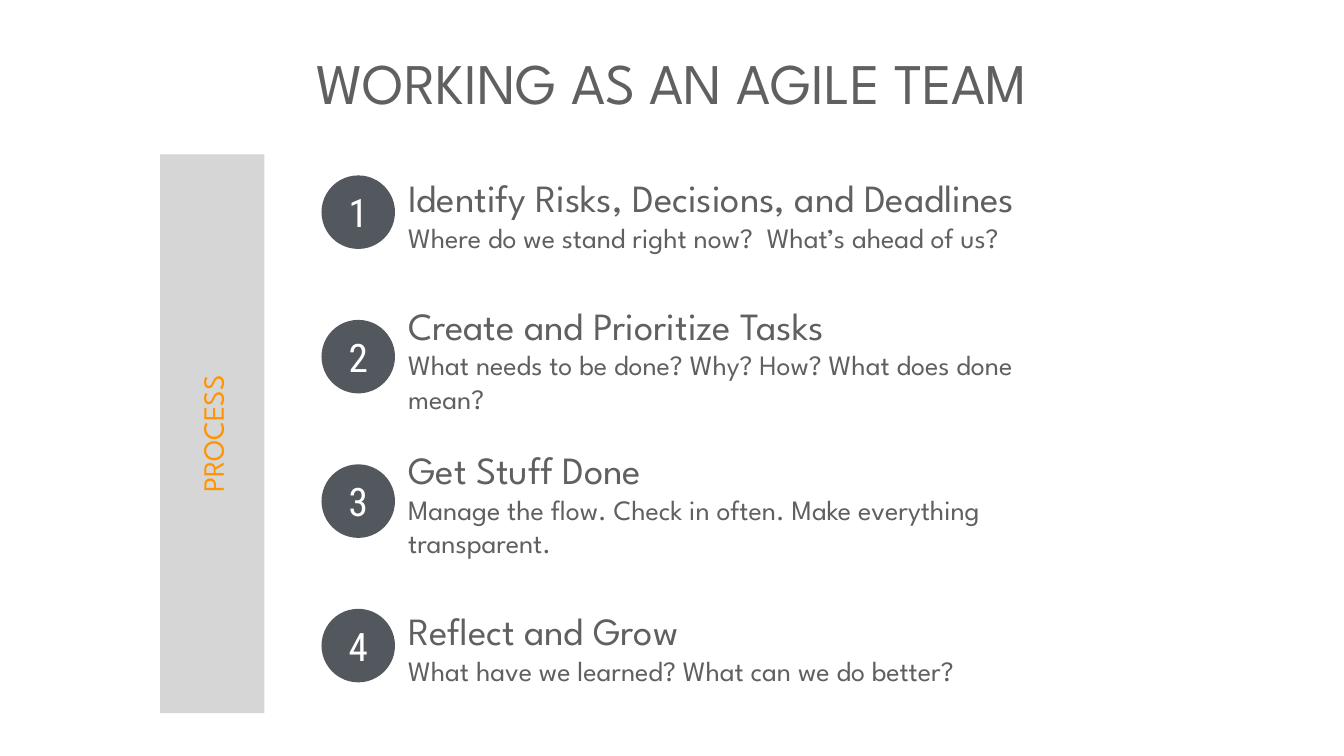
from pptx import Presentation
from pptx.dml.color import RGBColor
from pptx.enum.shapes import MSO_SHAPE
from pptx.enum.text import MSO_ANCHOR, PP_ALIGN
from pptx.util import Inches, Pt

RECTANGLE, OVAL = MSO_SHAPE.RECTANGLE, MSO_SHAPE.OVAL
MIDDLE = MSO_ANCHOR.MIDDLE
LEFT, CENTER = PP_ALIGN.LEFT, PP_ALIGN.CENTER

WIDTH, HEIGHT = 26.67, 15
INSET = Inches(0.08)

WHITE = RGBColor(0xFF, 0xFF, 0xFF)
LIGHT_GRAY = RGBColor(0xD6, 0xD6, 0xD6)
SLATE = RGBColor(0x53, 0x58, 0x5F)
TEXT_GRAY = RGBColor(0x60, 0x60, 0x60)
ORANGE = RGBColor(0xFF, 0x93, 0x00)

HEADING_FONT = "League Spartan"
NUMBER_FONT = "Roboto Condensed"

# Percent of the slide's height between two steps
STEP_PITCH = 19.11

# Heading, detail, text width in percent of the slide's width
STEPS = [
    ("Identify Risks, Decisions, and Deadlines",
     "Where do we stand right now?  What’s ahead of us?", 58),
    ("Create and Prioritize Tasks",
     "What needs to be done? Why? How? What does done mean?", 51.63),
    ("Get Stuff Done",
     "Manage the flow. Check in often. Make everything transparent.", 52.27),
    ("Reflect and Grow",
     "What have we learned? What can we do better?", 58),
]


def area(left, top, width, height):
    """Turn percentages of the slide's size into lengths."""
    return (Inches(WIDTH * left / 100), Inches(HEIGHT * top / 100),
            Inches(WIDTH * width / 100), Inches(HEIGHT * height / 100))


def write(shape, lines, font_name, color, align):
    """Fill a shape with paragraphs given as (text, size) pairs."""
    frame = shape.text_frame
    frame.word_wrap = True
    frame.vertical_anchor = MIDDLE
    frame.margin_left = frame.margin_right = INSET
    frame.margin_top = frame.margin_bottom = INSET
    frame.text = "\n".join(text for text, _ in lines)
    for paragraph, (_, size) in zip(frame.paragraphs, lines):
        paragraph.alignment = align
        for run in paragraph.runs:
            run.font.name = font_name
            run.font.size = Pt(size)
            run.font.color.rgb = color


def add_filled(shapes, preset, place, fill):
    shape = shapes.add_shape(preset, *place)
    shape.shadow.inherit = False
    shape.fill.solid()
    shape.fill.fore_color.rgb = fill
    shape.line.fill.background()
    return shape


def add_title(slide, text):
    title = slide.shapes.add_textbox(*area(6.45, 5.33, 87.1, 10.87))
    write(title, [(text, 82)], HEADING_FONT, TEXT_GRAY, CENTER)


def add_side_band(slide, label):
    band = add_filled(slide.shapes, RECTANGLE,
                      area(-5, 50.47, 41.58, 13.8), LIGHT_GRAY)
    band.rotation = 270
    write(band, [(label, 42)], HEADING_FONT, ORANGE, CENTER)


def add_step(slide, index, heading, detail, text_width):
    """Group a numbered circle with its heading and detail."""
    offset = index * STEP_PITCH
    step = slide.shapes.add_group_shape()
    badge = add_filled(step.shapes, OVAL,
                       area(23.92, 23.2 + offset, 5.47, 9.73), SLATE)
    write(badge, [(str(index + 1), 56)], NUMBER_FONT, WHITE, CENTER)
    description = step.shapes.add_textbox(
        *area(30.07, 22.2 + offset, text_width, 12.2))
    write(description, [(heading, 55), (detail, 40)],
          HEADING_FONT, TEXT_GRAY, LEFT)


def main():
    deck = Presentation()
    deck.slide_width, deck.slide_height = Inches(WIDTH), Inches(HEIGHT)
    slide = deck.slides.add_slide(deck.slide_layouts[6])
    add_side_band(slide, "PROCESS")
    for index, (heading, detail, text_width) in enumerate(STEPS):
        add_step(slide, index, heading, detail, text_width)
    add_title(slide, "WORKING AS AN AGILE TEAM")
    deck.save("out.pptx")


if __name__ == "__main__":
    main()
